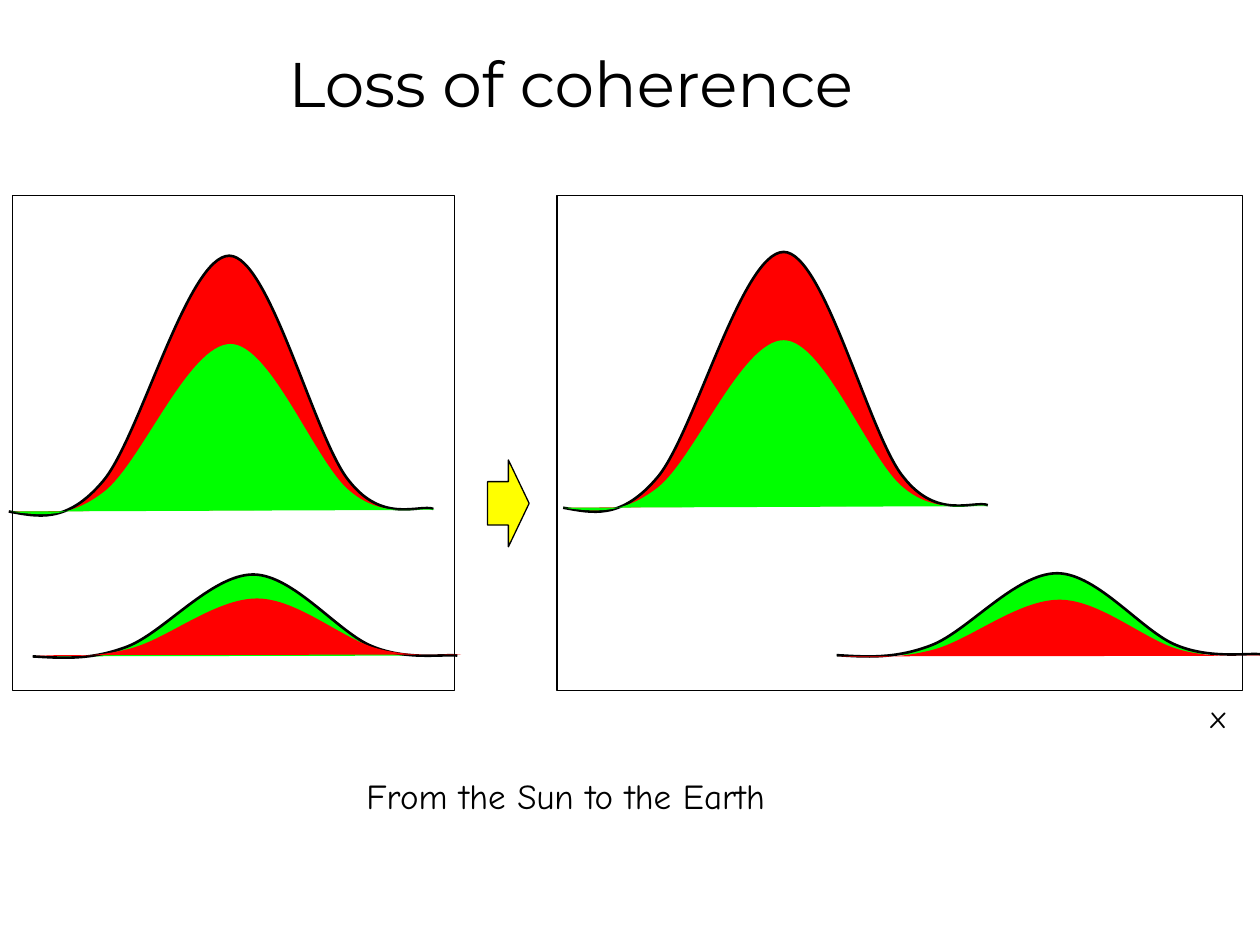
from lxml.etree import SubElement as Sub
from pptx import Presentation
from pptx.dml.color import RGBColor as RGB
from pptx.enum.shapes import MSO_SHAPE as Shape
from pptx.enum.text import MSO_ANCHOR as Anchor, MSO_AUTO_SIZE as Fit, PP_ALIGN as Align
from pptx.oxml.ns import qn
from pptx.util import Inches, Pt

THEME = {
    "black": RGB(0, 0, 0), "red": RGB(255, 0, 0),
    "green": RGB(0, 255, 0), "yellow": RGB(255, 255, 0),
    "head": "Montserrat", "body": "Comic Neue",
    "title": 36, "note": 20, "axis": 18,
    "thin": 0.75, "thick": 1.5,
}

TITLE = ("Loss of coherence", (2.18, 0.3, 4.7, 1))
LABELS = [
    ("x", "axis", (9.51, 5.48, 0.35, 0.4)),
    ("From the Sun to the Earth", "note", (2.81, 6.1, 3.83, 0.44)),
]
# left, top, peak height, fill, outlined; back to front
PACKETS = [
    (4.47, 2.0, 2.03, "red", True),
    (4.47, 2.7, 1.33, "green", False),
    (6.64, 4.55, 0.65, "green", True),
    (6.66, 4.76, 0.45, "red", False),
    (0.07, 2.03, 2.03, "red", True),
    (0.08, 2.73, 1.33, "green", False),
    (0.26, 4.56, 0.65, "green", True),
    (0.29, 4.75, 0.45, "red", False),
]
FRAMES = [(0.1, 1.55, 3.51, 3.93), (4.42, 1.55, 5.44, 3.93)]
ARROW = (3.87, 3.65, 0.33, 0.69)

# Bezier knots of one wave packet: x in inches, y as a share of peak height
WAVE = [
    (0, 1), (0.23, 1.02), (0.46, 1.05), (0.75, 0.88),
    (1.04, 0.71), (1.42, 0), (1.75, 0),
    (2.07, 0), (2.43, 0.72), (2.7, 0.88),
    (2.97, 1.05), (3.26, 0.97), (3.37, 0.99),
]


def bend(shape):
    """Turn each three line segments of a freeform into one cubic curve."""
    lines = list(shape.element.iter(qn("a:lnTo")))
    for i in range(0, len(lines), 3):
        curve = Sub(lines[i].getparent(), qn("a:cubicBezTo"))
        for line in lines[i:i + 3]:
            curve.append(line[0])
            line.getparent().remove(line)


def paint(shape, fill=None, width=None):
    shape.shadow.inherit = False
    if fill:
        shape.fill.solid()
        shape.fill.fore_color.rgb = THEME[fill]
    else:
        shape.fill.background()
    if width:
        shape.line.color.rgb = THEME["black"]
        shape.line.width = Pt(THEME[width])
    else:
        shape.line.fill.background()


def write(shape, text, size, font="body", align=Align.LEFT, fit=Fit.NONE):
    frame = shape.text_frame
    frame.text = text
    frame.word_wrap = False
    frame.auto_size = fit
    frame.vertical_anchor = Anchor.TOP
    para = frame.paragraphs[0]
    para.alignment = align
    face = para.runs[0].font
    face.name, face.size = THEME[font], Pt(THEME[size])
    face.color.rgb = THEME["black"]


def box(area):
    return [Inches(v) for v in area]


def main():
    prs = Presentation()
    prs.slide_width, prs.slide_height = Inches(10), Inches(7.5)
    slide = prs.slides.add_slide(prs.slide_layouts[5])
    shapes = slide.shapes

    text, area = TITLE
    title = shapes.title
    title.left, title.top, title.width, title.height = box(area)
    write(title, text, "title", font="head", align=Align.CENTER)
    for text, size, area in LABELS:
        write(shapes.add_textbox(*box(area)), text, size, fit=Fit.SHAPE_TO_FIT_TEXT)

    for left, top, peak, fill, edge in PACKETS:
        pts = [(Inches(left + x), Inches(top + y * peak)) for x, y in WAVE]
        pen = shapes.build_freeform(*pts[0])
        pen.add_line_segments(pts[1:], close=False)
        packet = pen.convert_to_shape()
        bend(packet)
        paint(packet, fill, "thick" if edge else None)

    for area in FRAMES:
        paint(shapes.add_shape(Shape.RECTANGLE, *box(area)), width="thin")
    paint(shapes.add_shape(Shape.RIGHT_ARROW, *box(ARROW)), "yellow", "thin")

    prs.save("out.pptx")


if __name__ == "__main__":
    main()
